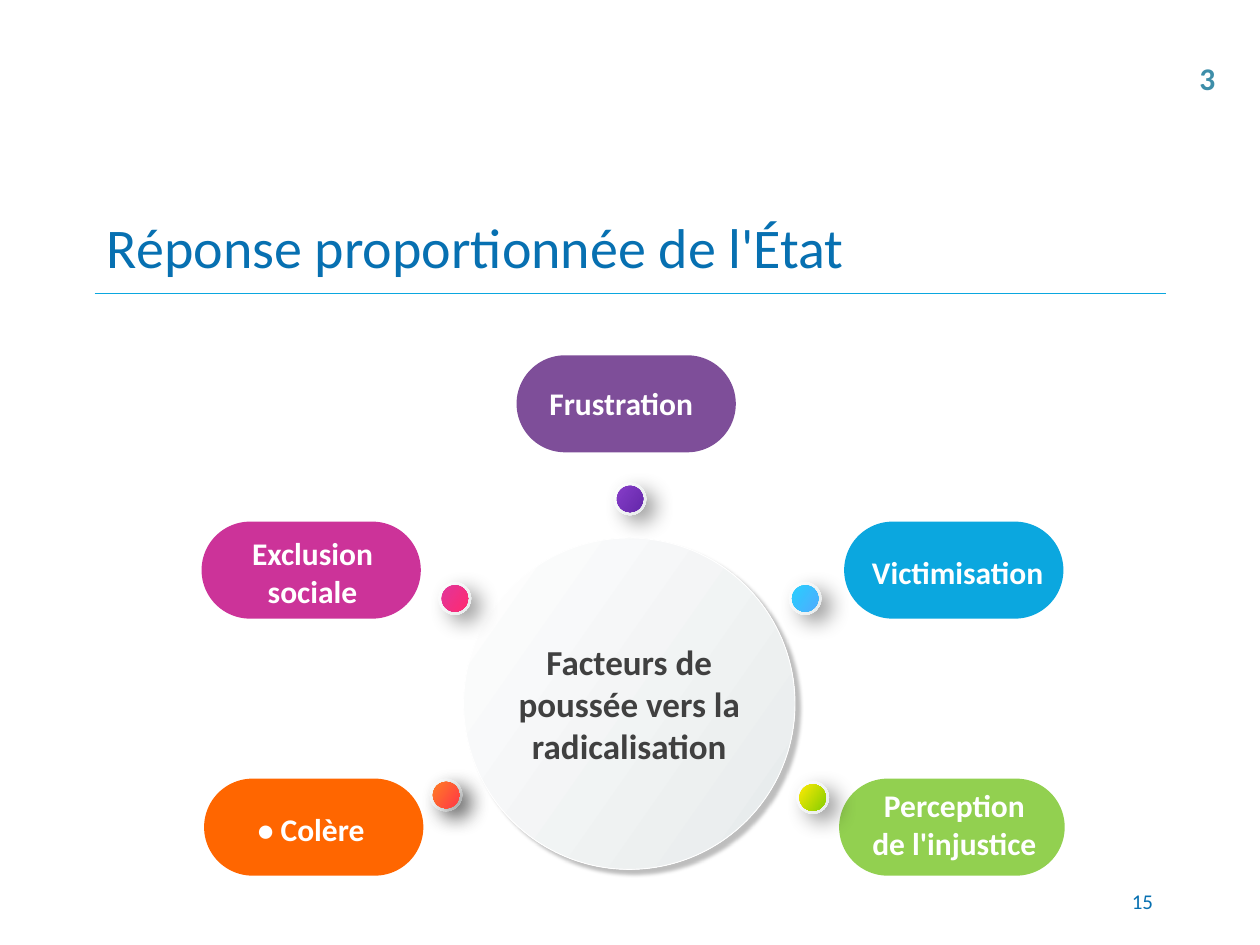
"""Build the slide on push factors around a central hub."""
from lxml.etree import SubElement as Sub
from pptx import Presentation
from pptx.dml.color import RGBColor
from pptx.enum.shapes import MSO_CONNECTOR as Link, MSO_SHAPE as Form
from pptx.enum.text import MSO_ANCHOR as Anchor, PP_ALIGN as Align
from pptx.oxml.ns import qn
from pptx.util import Inches, Pt

deck = Presentation()
deck.slide_width, deck.slide_height = Inches(10), Inches(7.5)
cell = deck.slide_width / 100
slide = deck.slides.add_slide(deck.slide_layouts[6])
hue = RGBColor.from_string


def draw(form, spot, tints, shade=None):
    """Add a borderless shape with one tint or a blend of two."""
    item = slide.shapes.add_shape(form, *[int(n * cell) for n in spot])
    item.shadow.inherit = False
    item.line.fill.background()
    if len(tints) == 1:
        item.fill.solid()
        item.fill.fore_color.rgb = hue(tints[0])
    else:
        item.fill.gradient()
        item.fill.gradient_angle = 325
        for stop, tint in zip(item.fill.gradient_stops, tints):
            stop.color.rgb = hue(tint)
    if shade:
        alpha, blur, gap, turn = shade
        glow = item._element.spPr.find(qn("a:effectLst"))
        cast = Sub(glow, qn("a:outerShdw"), blurRad=str(Pt(blur)), dist=str(Pt(gap)),
                   dir=str(turn * 60000), algn="tl", rotWithShape="0")
        tone = Sub(cast, qn("a:srgbClr"), val="000000")
        Sub(tone, qn("a:alpha"), val=str(alpha * 1000))
    return item


def write(item, words, size, tint, bold, align, anchor, inset):
    """Put one run of text into a shape or text box."""
    frame = item.text_frame
    frame.word_wrap = True
    frame.vertical_anchor = anchor
    frame.margin_left = frame.margin_right = Inches(inset)
    frame.margin_top = frame.margin_bottom = Inches(min(inset, 0.05))
    para = frame.paragraphs[0]
    para.alignment = align
    run = para.add_run()
    run.text = words
    run.font.name, run.font.size, run.font.bold = "Calibri", Pt(size), bold
    run.font.color.rgb = hue(tint)


pearl = ("FFFFFF", "E6EAEB")
soft = (38, 12, 7, 38)

rule = slide.shapes.add_connector(
    Link.STRAIGHT, *[int(n * cell) for n in (7.5, 23.3, 92.5, 23.3)])
rule.line.color.rgb = hue("0BA7DF")
rule.line.width = Pt(0.75)
Sub(rule._element.spPr, qn("a:effectLst"))

hub = draw(Form.OVAL, (36.8, 42.7, 26.3, 26.3), pearl, (26, 2, 3.7, 39))
hub.line.color.rgb = hue("FFFFFF")
hub.line.width = Pt(0.5)
write(hub, "Facteurs de poussée vers la radicalisation", 20, "404040", True,
      Align.CENTER, Anchor.MIDDLE, 0.04)

pills = [
    (16.2, 61.8, 17.4, "FF6600"),
    (16, 41.4, 17.4, "CC3399"),
    (41, 28.2, 17.4, "7E4E99"),
    (67, 41.4, 17.4, "0BA7DF"),
    (66.6, 61.8, 17.9, "92D050"),
]
for x, y, wide, tint in pills:
    pill = draw(Form.ROUNDED_RECTANGLE, (x, y, wide, 7.7), [tint])
    pill.adjustments[0] = 0.5

dots = [
    (34.1, 61.8, ("FF7D25", "FF3847"), soft),
    (34.8, 46.2, ("E1359B", "FF2A70"), None),
    (48.7, 38.3, ("863DC8", "6428AA"), None),
    (62.6, 46.2, ("28CFFE", "4FACFE"), None),
    (63.2, 62, ("FFEA03", "85CE02"), None),
]
for x, y, tints, shade in dots:
    draw(Form.OVAL, (x, y, 2.6, 2.6), pearl, soft)
    draw(Form.OVAL, (x + 0.25, y + 0.25, 2.1, 2.1), tints, shade)

tag = (18, "FFFFFF", True)
mid = (Align.CENTER, Anchor.TOP, 0.04)
left = (Align.LEFT, Anchor.TOP, 0.04)
notes = [
    ((18.7, 63.9, 12, 6.7), "• Colère", *tag, *mid),
    ((16.7, 42, 16.2, 6.7), "Exclusion sociale", *tag, *mid),
    ((43.2, 30.1, 13.5, 6.4), "Frustration", *tag, *left),
    ((68.8, 43.5, 14.9, 6.4), "Victimisation", *tag, *left),
    ((68.3, 62, 14.9, 6.7), "Perception de l'injustice", *tag, *mid),
    ((7.5, 15.8, 85, 7.5), "Réponse proportionnée de l'État", 32, "0770B1", False,
     Align.LEFT, Anchor.MIDDLE, 0.1),
    ((94.2, 4.2, 3.2, 4), "3", 18, "3E8EA9", True, Align.LEFT, Anchor.TOP, 0.1),
    ((71.7, 69.5, 20.8, 4), "15", 12, "0770B1", False,
     Align.RIGHT, Anchor.MIDDLE, 0.1),
]
for spot, *style in notes:
    write(slide.shapes.add_textbox(*[int(n * cell) for n in spot]), *style)

deck.save("out.pptx")
